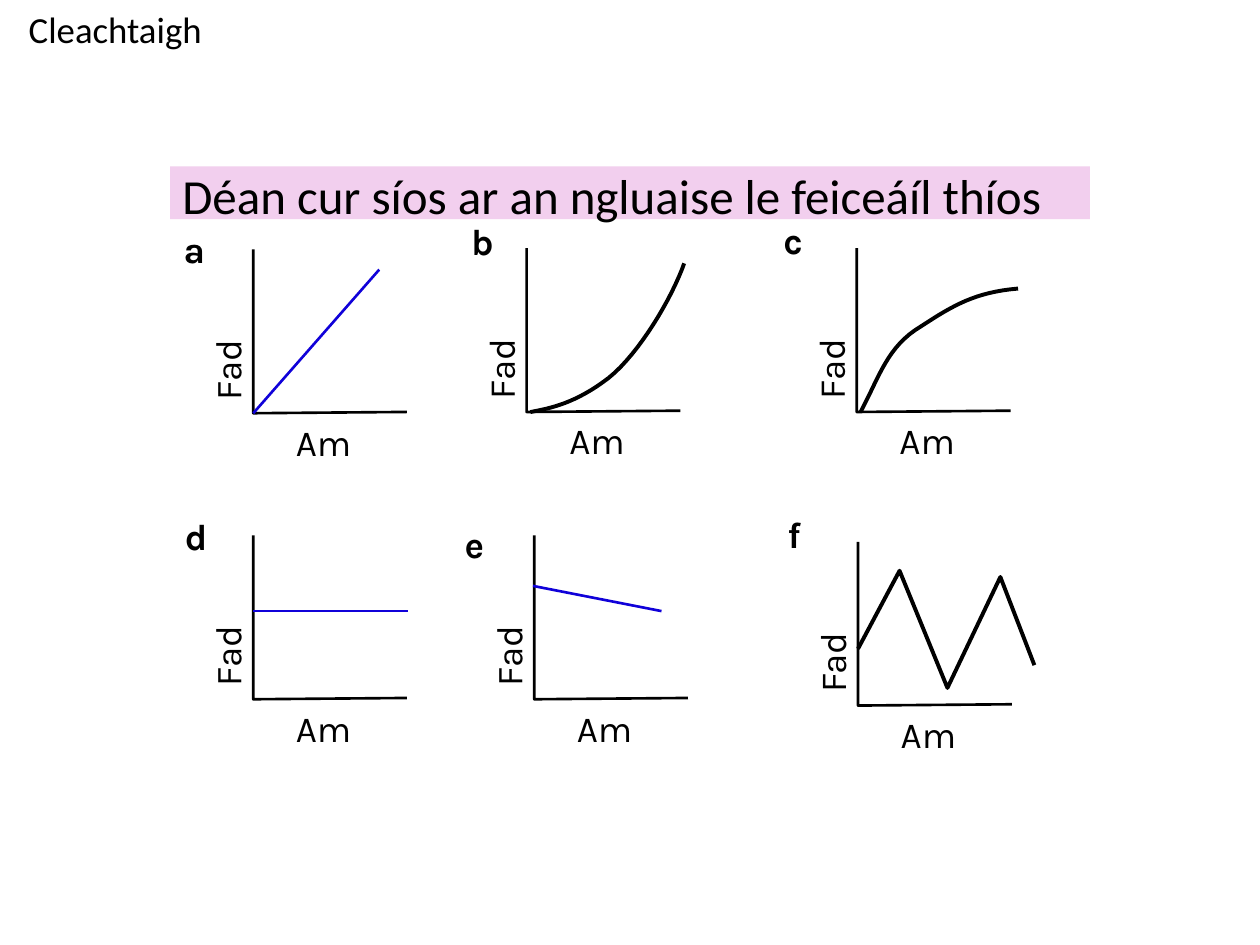
import pptx
import pptx.util
import pptx.dml.color
import pptx.enum.shapes
import pptx.enum.text
from pptx.util import Inches

COLORS = {"text": "000000", "axis": "000000", "curve": "000000",
          "straight": "1001D9", "banner": "F2CFEE"}
LABEL = {"name": "Karla", "size": pptx.util.Pt(21)}
LETTER = {**LABEL, "bold": True}
TITLE = {"name": "Calibri", "size": pptx.util.Pt(21)}
BANNER = {"name": "Calibri", "size": pptx.util.Pt(28)}
ANCHOR = pptx.enum.text.MSO_ANCHOR
AXIS_HEIGHT, AXIS_WIDTH = 1.3, 1.22


def rgb(name):
    return pptx.dml.color.RGBColor.from_string(COLORS[name])


def write_text(shape, text, font, anchor=ANCHOR.TOP, wrap=True, **spacing):
    frame = shape.text_frame
    frame.word_wrap = wrap
    frame.vertical_anchor = anchor
    paragraph = frame.paragraphs[0]
    paragraph.alignment = pptx.enum.text.PP_ALIGN.LEFT
    for name, value in spacing.items():
        setattr(paragraph, name, value)
    run = paragraph.add_run()
    run.text = text
    for name, value in font.items():
        setattr(run.font, name, value)
    run.font.color.rgb = rgb("text")


def add_text(slide, box, text, font, rotation=0, **options):
    shape = slide.shapes.add_textbox(*map(Inches, box))
    shape.rotation = rotation
    write_text(shape, text, font, **options)


def add_banner(slide, box, text):
    shape = slide.shapes.add_shape(
        pptx.enum.shapes.MSO_SHAPE.RECTANGLE, *map(Inches, box))
    shape.shadow.inherit = False
    shape.fill.solid()
    shape.fill.fore_color.rgb = rgb("banner")
    shape.line.fill.background()
    write_text(shape, text, BANNER, line_spacing=0.9)


def style_line(shape, color, width):
    shape.line.color.rgb = rgb(color)
    shape.line.width = pptx.util.Pt(width)


def add_path(slide, points, color, width):
    start, *others = [(Inches(x), Inches(y)) for x, y in points]
    builder = slide.shapes.build_freeform(*start)
    builder.add_line_segments(others, close=False)
    shape = builder.convert_to_shape()
    shape.shadow.inherit = False
    shape.fill.background()
    style_line(shape, color, width)


def add_straight(slide, start, end):
    connector = slide.shapes.add_connector(
        pptx.enum.shapes.MSO_CONNECTOR.STRAIGHT,
        *map(Inches, (*start, *end)))
    connector._element.spPr.append(
        pptx.oxml.parse_xml('<a:effectLst xmlns:a="http://schemas.'
                            'openxmlformats.org/drawingml/2006/main"/>'))
    style_line(connector, "straight", 1.5)


def bezier_points(controls, steps=16):
    """Points along joined cubic curves: a start, then three points a curve."""
    points = [controls[0]]
    for first in range(0, len(controls) - 1, 3):
        curve = controls[first:first + 4]
        for step in range(1, steps + 1):
            t = step / steps
            weights = ((1 - t) ** 3, 3 * t * (1 - t) ** 2,
                       3 * t ** 2 * (1 - t), t ** 3)
            points.append(tuple(sum(w * p[axis] for w, p in zip(weights, curve))
                                for axis in (0, 1)))
    return points


def add_axes(slide, x, y):
    """Axes with their labels, meeting at the origin x, y."""
    add_text(slide, (x - 0.86, y - 0.88, 1.3, 0.45), "Fad", LABEL, rotation=270)
    add_text(slide, (x + 0.24, y, 0.97, 0.45), "Am", LABEL)
    add_path(slide, [(x, y - AXIS_HEIGHT), (x, y), (x + AXIS_WIDTH, y - 0.01)],
             "axis", 1.5)


def add_graph(slide, letter, letter_box, origin, kind, points):
    add_axes(slide, *origin)
    if kind == "straight":
        add_straight(slide, *points)
    else:
        path = bezier_points(points) if kind == "curve" else points
        add_path(slide, path, "curve", 2.25)
    add_text(slide, (*letter_box, 0.45), letter, LETTER, wrap=False,
             space_after=pptx.util.Pt(9))


# letter, its left, top and width, origin of the axes, kind of line, its points
GRAPHS = [
    ("a", (1.36, 1.75, 0.36), (2.01, 3.28), "straight",
     [(2.01, 3.28), (3.01, 2.14)]),
    ("b", (3.64, 1.69, 0.38), (4.18, 3.27), "curve",
     [(4.21, 3.27), (4.37, 3.24), (4.57, 3.2), (4.83, 3),
      (5.08, 2.8), (5.34, 2.35), (5.43, 2.09)]),
    ("c", (6.12, 1.68, 0.36), (6.8, 3.27), "curve",
     [(6.83, 3.27), (6.98, 2.99), (7.04, 2.75), (7.31, 2.59),
      (7.57, 2.42), (7.74, 2.32), (8.08, 2.29)]),
    ("d", (1.37, 4.03, 0.37), (2.01, 5.55), "straight",
     [(2.01, 4.85), (3.24, 4.85)]),
    ("e", (3.59, 4.09, 0.36), (4.24, 5.55), "straight",
     [(4.23, 4.65), (5.25, 4.85)]),
    ("f", (6.15, 4.01, 0.3), (6.81, 5.6), "zigzag",
     [(6.81, 5.15), (7.14, 4.53), (7.52, 5.46), (7.94, 4.58), (8.21, 5.28)]),
]


def main():
    presentation = pptx.Presentation()
    presentation.slide_width = Inches(10)
    presentation.slide_height = Inches(7.5)
    slide = presentation.slides.add_slide(presentation.slide_layouts[6])
    add_text(slide, (0.13, 0, 7.23, 0.5), "Cleachtaigh", TITLE,
             anchor=ANCHOR.MIDDLE, line_spacing=0.9)
    add_banner(slide, (1.35, 1.32, 7.3, 0.42),
               "Déan cur síos ar an ngluaise le feiceáíl thíos")
    for graph in GRAPHS:
        add_graph(slide, *graph)
    presentation.save("out.pptx")


if __name__ == "__main__":
    main()
